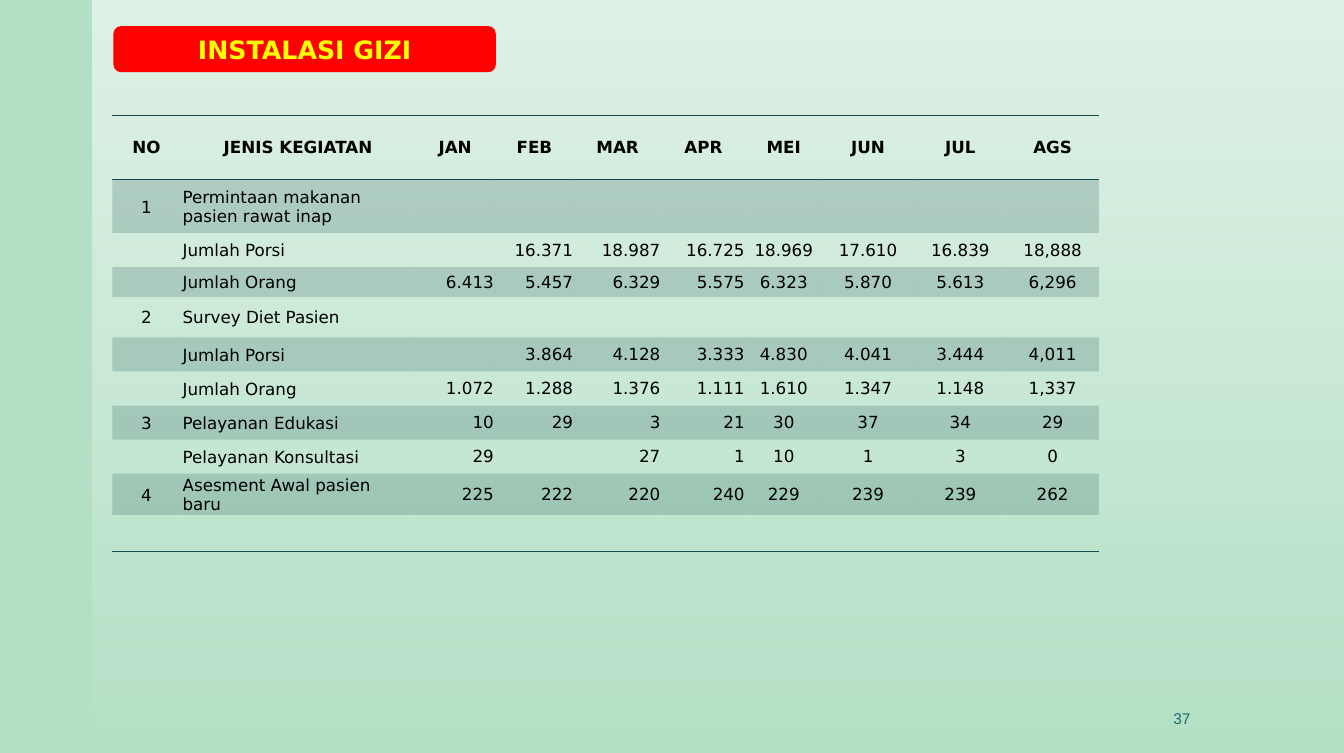
from dataclasses import dataclass

from lxml import etree
from pptx import Presentation
from pptx.dml.color import RGBColor
from pptx.enum import shapes, text
from pptx.oxml import ns
from pptx.util import Inches, Pt

COLORS = {
    "background": "B3E0C5",
    "panel": "FFFFFF",
    "table": "164B4F",
    "table_text": "000000",
    "banner": "FF0000",
    "title": "FFFF00",
    "page_number": "1F696F",
}
LEFT, CENTER, RIGHT = text.PP_ALIGN.LEFT, text.PP_ALIGN.CENTER, text.PP_ALIGN.RIGHT
BANNER_BOX = [Inches(value) for value in (1.13, 0.26, 3.81, 0.46)]
NO_STYLE = "{2D5ABB26-0587-4C30-8999-92F81FD0307C}"
BAND_OPACITY = 20

MONTHS = ["JAN", "FEB", "MAR", "APR", "MEI", "JUN", "JUL", "AGS"]
COLUMN_WIDTHS = [0.68, 2.34, 0.79, 0.79, 0.87, 0.84, 0.76, 0.92, 0.92, 0.92]
COLUMN_ALIGNMENTS = [CENTER, LEFT] + [RIGHT] * 4 + [CENTER] * 4
NO_VALUES = [""] * len(MONTHS)


@dataclass
class Activity:
    number: str
    label: str
    values: list[str]
    height: float = 0.34


@dataclass
class Insets:
    left: float
    top: float
    right: float
    bottom: float


HEADER_INSETS = Insets(0.1, 0.08, 0.1, 0.08)
NUMBER_INSETS = Insets(0.02, 0.02, 0.02, 0)
LABEL_INSETS = Insets(0.02, 0.02, 0.4, 0)
VALUE_INSETS = Insets(0.01, 0.01, 0.01, 0)
COLUMN_INSETS = [NUMBER_INSETS, LABEL_INSETS] + [VALUE_INSETS] * len(MONTHS)

ACTIVITIES = [
    Activity("NO", "JENIS KEGIATAN", MONTHS, 0.64),
    Activity("1", "Permintaan makanan pasien rawat inap", NO_VALUES, 0.53),
    Activity("", "Jumlah Porsi", ["", "16.371", "18.987", "16.725",
                                  "18.969", "17.610", "16.839", "18,888"]),
    Activity("", "Jumlah Orang", ["6.413", "5.457", "6.329", "5.575",
                                  "6.323", "5.870", "5.613", "6,296"], 0.3),
    Activity("2", "Survey Diet Pasien", NO_VALUES, 0.4),
    Activity("", "Jumlah Porsi", ["", "3.864", "4.128", "3.333",
                                  "4.830", "4.041", "3.444", "4,011"]),
    Activity("", "Jumlah Orang", ["1.072", "1.288", "1.376", "1.111",
                                  "1.610", "1.347", "1.148", "1,337"]),
    Activity("3", "Pelayanan Edukasi", ["10", "29", "3", "21", "30", "37", "34", "29"]),
    Activity("", "Pelayanan Konsultasi", ["29", "", "27", "1", "10", "1", "3", "0"]),
    Activity("4", "Asesment Awal pasien baru",
             ["225", "222", "220", "240", "229", "239", "239", "262"], 0.4),
    Activity("", "", NO_VALUES, 0.36),
]


def rgb(name: str) -> RGBColor:
    return RGBColor.from_string(COLORS[name])


def set_opacity(color_element, percent: int) -> None:
    alpha = etree.SubElement(color_element, ns.qn("a:alpha"))
    alpha.set("val", str(percent * 1000))


def write_text(frame, content: str, *, size: float, color: str, font: str = "DejaVu Sans",
               bold: bool = False, align=CENTER) -> None:
    frame.text = content
    frame.word_wrap = True
    frame.vertical_anchor = text.MSO_ANCHOR.MIDDLE
    paragraph = frame.paragraphs[0]
    paragraph.alignment = align
    for target in (paragraph, *paragraph.runs):
        target.font.name = font
        target.font.size = Pt(size)
        target.font.bold = bold
        target.font.color.rgb = rgb(color)


def add_panel(slide) -> None:
    """Lay a white veil, fading downwards, right of the side strip."""
    panel = slide.shapes.add_shape(shapes.MSO_SHAPE.RECTANGLE, Inches(0.92), 0,
                                   Inches(12.47), Inches(7.5))
    panel.shadow.inherit = False
    panel.line.fill.background()
    panel.fill.gradient()
    panel.fill.gradient_angle = 270
    for stop, position in zip(panel.fill.gradient_stops, (0, 1)):
        stop.position = position
        stop.color.rgb = rgb("panel")
    for color_element, percent in zip(panel.element.iter(ns.qn("a:srgbClr")), (60, 0)):
        set_opacity(color_element, percent)


def add_border(cell, index: int, side: str) -> None:
    """Insert a border line at its place in the cell properties."""
    line = etree.Element(ns.qn(f"a:{side}"), w=str(Pt(1)))
    fill = etree.SubElement(line, ns.qn("a:solidFill"))
    etree.SubElement(fill, ns.qn("a:srgbClr"), val=COLORS["table"])
    cell._tc.get_or_add_tcPr().insert(index, line)


def format_cell(cell, content: str, row: int, column: int) -> None:
    is_header = row == 0
    insets = HEADER_INSETS if is_header else COLUMN_INSETS[column]
    cell.margin_left, cell.margin_right = Inches(insets.left), Inches(insets.right)
    cell.margin_top, cell.margin_bottom = Inches(insets.top), Inches(insets.bottom)
    write_text(cell.text_frame, content, size=12, color="table_text", bold=is_header,
               align=CENTER if is_header else COLUMN_ALIGNMENTS[column])
    cell.vertical_anchor = text.MSO_ANCHOR.MIDDLE
    if row % 2:
        cell.fill.solid()
        cell.fill.fore_color.rgb = rgb("table")
        set_opacity(cell._tc.tcPr.find(".//" + ns.qn("a:srgbClr")), BAND_OPACITY)
    else:
        cell.fill.background()
    borders = {0: ["lnT", "lnB"], len(ACTIVITIES) - 1: ["lnB"]}.get(row, [])
    for index, side in enumerate(borders):
        add_border(cell, index, side)


def add_activity_table(slide) -> None:
    frame = slide.shapes.add_table(
        len(ACTIVITIES), len(COLUMN_WIDTHS), Inches(1.12), Inches(1.15),
        Inches(sum(COLUMN_WIDTHS)), Inches(sum(item.height for item in ACTIVITIES)))
    table = frame.table
    table.first_row = table.horz_banding = False
    next(frame.element.iter(ns.qn("a:tableStyleId"))).text = NO_STYLE
    for column, width in zip(table.columns, COLUMN_WIDTHS):
        column.width = Inches(width)
    for row, activity in enumerate(ACTIVITIES):
        table.rows[row].height = Inches(activity.height)
        for column, content in enumerate([activity.number, activity.label, *activity.values]):
            format_cell(table.cell(row, column), content, row, column)


def add_page_number(slide) -> None:
    box = slide.shapes.add_textbox(Inches(8.84), Inches(6.95), Inches(3.12), Inches(0.4))
    write_text(box.text_frame, "37", size=11.1, color="page_number", font="Arial", align=RIGHT)


def add_title_banner(slide) -> None:
    banner = slide.shapes.add_shape(shapes.MSO_SHAPE.ROUNDED_RECTANGLE, *BANNER_BOX)
    banner.shadow.inherit = False
    banner.fill.solid()
    banner.fill.fore_color.rgb = rgb("banner")
    banner.line.fill.background()
    title = slide.shapes.title
    title.left, title.top, title.width, title.height = BANNER_BOX
    write_text(title.text_frame, "INSTALASI GIZI", size=18.1, color="title", bold=True)
    banner.element.addnext(title.element)


def main() -> None:
    presentation = Presentation()
    presentation.slide_width, presentation.slide_height = Inches(13.39), Inches(7.5)
    slide = presentation.slides.add_slide(presentation.slide_layouts[5])
    slide.background.fill.solid()
    slide.background.fill.fore_color.rgb = rgb("background")
    add_panel(slide)
    add_activity_table(slide)
    add_page_number(slide)
    add_title_banner(slide)
    presentation.save("out.pptx")


if __name__ == "__main__":
    main()
